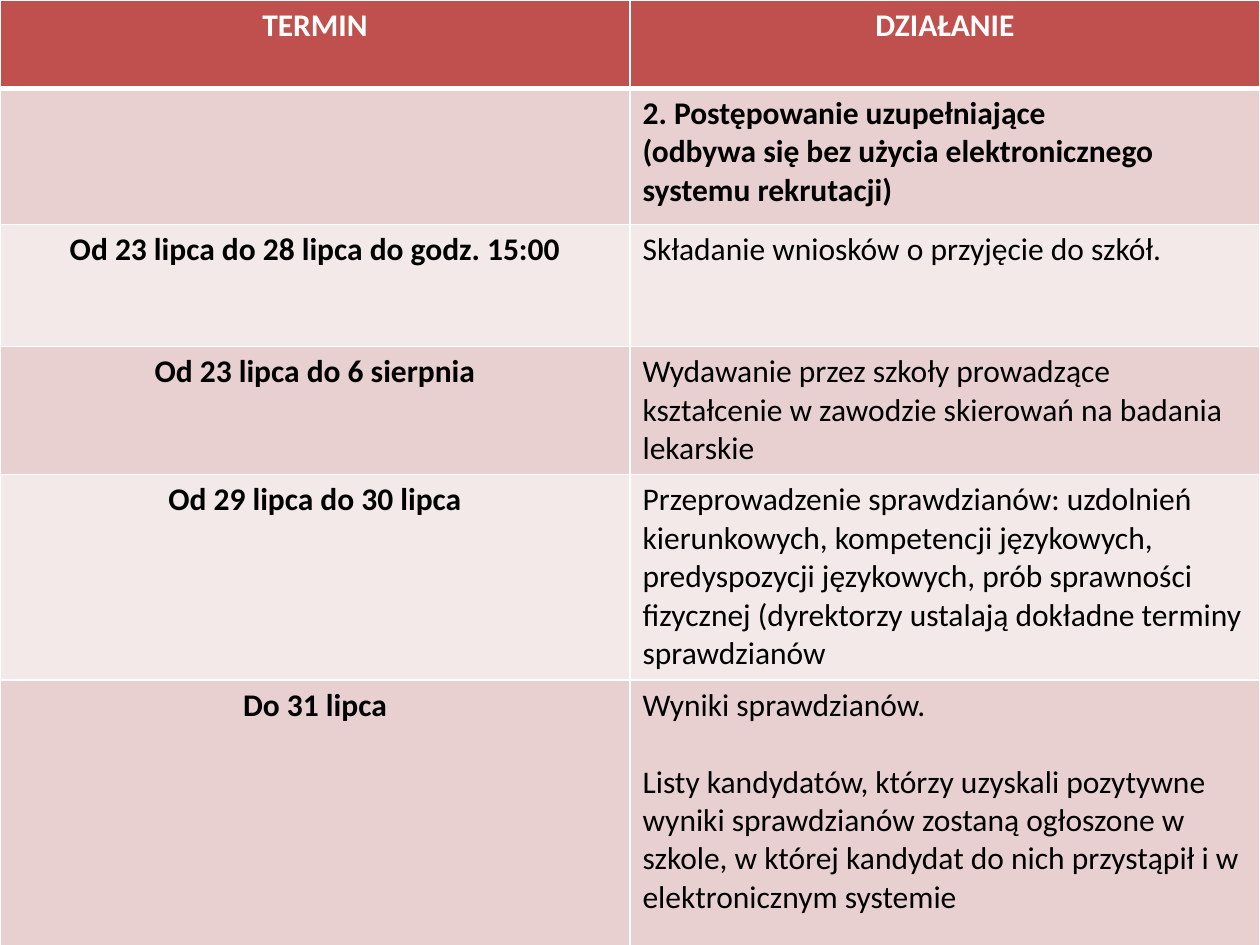
from dataclasses import dataclass

from lxml import etree
from pptx import Presentation, util as u
from pptx.dml.color import RGBColor
from pptx.enum import text
from pptx.oxml import ns


@dataclass(frozen=True)
class Theme:
    font: str = "Calibri"
    size: int = 18
    header: str = "C0504D"
    bands: tuple = ("E8D0D0", "F4E9E9")
    header_ink: str = "FFFFFF"
    ink: str = "000000"
    border: str = "FFFFFF"
    thin: int = 1
    thick: int = 3
    paragraph_gap: int = 22


THEME = Theme()
WIDTH, HEIGHT = u.Inches(10), u.Inches(7.5)

# Row height in inches, date, actions (one string per paragraph)
SCHEDULE = [
    (0.7, "TERMIN", ["DZIAŁANIE"]),
    (1.08, "", ["2. Postępowanie uzupełniające",
                "(odbywa się bez użycia elektronicznego systemu rekrutacji)"]),
    (0.97, "Od 23 lipca do 28 lipca do godz. 15:00",
     ["Składanie wniosków o przyjęcie do szkół."]),
    (1.01, "Od 23 lipca do 6 sierpnia",
     ["Wydawanie przez szkoły prowadzące kształcenie w zawodzie skierowań na "
      "badania lekarskie"]),
    (1.63, "Od 29 lipca do 30 lipca",
     ["Przeprowadzenie sprawdzianów: uzdolnień kierunkowych, kompetencji "
      "językowych, predyspozycji językowych, prób sprawności fizycznej "
      "(dyrektorzy ustalają dokładne terminy sprawdzianów"]),
    (2.11, "Do 31 lipca",
     ["Wyniki sprawdzianów.",
      "Listy kandydatów, którzy uzyskali pozytywne wyniki sprawdzianów zostaną "
      "ogłoszone w szkole, w której kandydat do nich przystąpił i w "
      "elektronicznym systemie"]),
]
HEADER_ROW, STAGE_ROW, RESULTS_ROW = 0, 1, len(SCHEDULE) - 1


def set_borders(cell, row):
    """Draw the four edges, with a thicker rule under the header."""
    properties = cell._tc.get_or_add_tcPr()
    thick_edge = {HEADER_ROW: "lnB", STAGE_ROW: "lnT"}.get(row)
    for edge in ("lnL", "lnR", "lnT", "lnB"):
        points = THEME.thick if edge == thick_edge else THEME.thin
        line = etree.SubElement(properties, ns.qn(f"a:{edge}"),
                                w=str(u.Pt(points)))
        fill = etree.SubElement(line, ns.qn("a:solidFill"))
        etree.SubElement(fill, ns.qn("a:srgbClr"), val=THEME.border)


def fill_cell(cell, row, paragraphs, centred, bold):
    is_header = row == HEADER_ROW
    set_borders(cell, row)
    cell.fill.solid()
    band = THEME.header if is_header else THEME.bands[(row - 1) % 2]
    cell.fill.fore_color.rgb = RGBColor.from_string(band)
    cell.text_frame.text = "\n".join(paragraphs)
    for paragraph in cell.text_frame.paragraphs:
        paragraph.alignment = (text.PP_ALIGN.CENTER if centred
                               else text.PP_ALIGN.LEFT)
        font = paragraph.font
        font.size = u.Pt(THEME.size)
        for run in paragraph.runs:
            run.font.name, run.font.size = THEME.font, u.Pt(THEME.size)
            run.font.bold = bold
            run.font.color.rgb = RGBColor.from_string(
                THEME.header_ink if is_header else THEME.ink)


def add_schedule(slide, left, top, width, height):
    """Two equal columns; rows share the height by their weights."""
    table = slide.shapes.add_table(len(SCHEDULE), 2, left, top,
                                   width, height).table
    for column in table.columns:
        column.width = width // 2
    total = sum(weight for weight, _, _ in SCHEDULE)
    for row, (weight, date, actions) in enumerate(SCHEDULE):
        table.rows[row].height = int(height * weight / total)
        fill_cell(table.cell(row, 0), row, [date], True, True)
        fill_cell(table.cell(row, 1), row, actions, row == HEADER_ROW,
                  row in (HEADER_ROW, STAGE_ROW))
    # Set the list of candidates apart from the results
    lists = table.cell(RESULTS_ROW, 1).text_frame.paragraphs[-1]
    lists.space_before = u.Pt(THEME.paragraph_gap)


def main():
    deck = Presentation()
    deck.slide_width, deck.slide_height = WIDTH, HEIGHT
    slide = deck.slides.add_slide(deck.slide_layouts.get_by_name("Blank"))
    add_schedule(slide, 0, 0, WIDTH, HEIGHT)
    deck.save("out.pptx")


if __name__ == "__main__":
    main()
